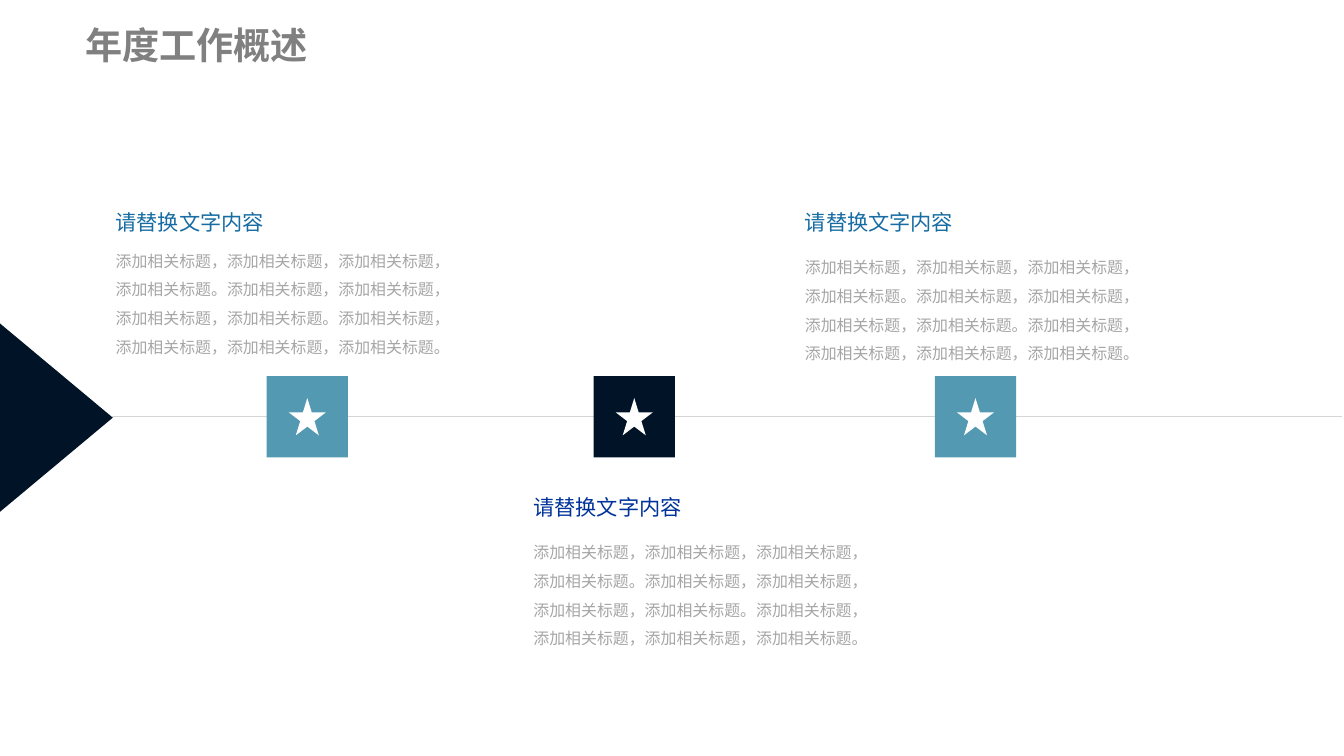
from pptx import Presentation
from pptx.dml.color import RGBColor
from pptx.enum.shapes import MSO_CONNECTOR, MSO_SHAPE
from pptx.enum.text import MSO_ANCHOR
from pptx.oxml.ns import qn
from pptx.util import Inches, Pt
from lxml import etree

TRIANGLE = MSO_SHAPE.ISOSCELES_TRIANGLE
SQUARE = MSO_SHAPE.RECTANGLE
STAR = MSO_SHAPE.STAR_5_POINT
STRAIGHT = MSO_CONNECTOR.STRAIGHT
TOP, MIDDLE = MSO_ANCHOR.TOP, MSO_ANCHOR.MIDDLE

PAGE_WIDTH, PAGE_HEIGHT = 14.06, 7.91
AXIS_Y = 4.36
SQUARE_SIZE, STAR_SIZE = 0.85, 0.39
TEXT_WIDTH, HEADING_WIDTH = 3.57, 1.57
HEADING_HEIGHT, BODY_HEIGHT = 0.27, 1.18
UPPER_Y, LOWER_Y = 2.19, 5.17

NAVY, TEAL, WHITE = "011327", "5399B2", "FFFFFF"
BLUE, ROYAL = "166CA3", "003399"
LINE_GREY, BODY_GREY, TITLE_GREY = "D5D5D5", "A6A6A6", "808080"

HEADING = "请替换文字内容"
BODY = ("添加相关标题，" * 3 + "添加相关标题。") * 3

# square left, square colour, text left, text top, heading colour, body offset
MILESTONES = [
    (2.79, TEAL, 1.21, UPPER_Y, BLUE, 0.34),
    (6.21, NAVY, 5.58, LOWER_Y, ROYAL, 0.41),
    (9.78, TEAL, 8.42, UPPER_Y, BLUE, 0.41),
]


def colour(code):
    return RGBColor.from_string(code)


def add_solid(shapes, kind, left, top, width, height, fill):
    shape = shapes.add_shape(kind, Inches(left), Inches(top),
                             Inches(width), Inches(height))
    shape.shadow.inherit = False
    shape.fill.solid()
    shape.fill.fore_color.rgb = colour(fill)
    shape.line.fill.background()
    return shape


def add_text(page, left, top, width, height, text, size, ink,
             bold=False, wrap=True, spacing=None, anchor=TOP):
    box = page.shapes.add_textbox(Inches(left), Inches(top),
                                  Inches(width), Inches(height))
    frame = box.text_frame
    frame.margin_left = frame.margin_right = 0
    frame.margin_top = frame.margin_bottom = 0
    frame.word_wrap = wrap
    frame.vertical_anchor = anchor
    para = frame.paragraphs[0]
    if spacing:
        para.line_spacing = spacing
    span = para.add_run()
    span.text = text
    span.font.name = "Arial"
    span.font.size = Pt(size)
    span.font.bold = bold
    span.font.color.rgb = colour(ink)


def add_axis(page, left, right, arrow_width, arrow_height):
    """Draw the timeline with a large arrowhead at the page's left edge."""
    # The triangle is turned, so its own width is the height seen on the page.
    arrow = add_solid(page.shapes, TRIANGLE, (arrow_width - arrow_height) / 2,
                      AXIS_Y + 0.01 - arrow_width / 2,
                      arrow_height, arrow_width, NAVY)
    arrow.rotation = 90
    line = page.shapes.add_connector(STRAIGHT, Inches(left), Inches(AXIS_Y),
                                     Inches(right), Inches(AXIS_Y))
    line.line.color.rgb = colour(LINE_GREY)
    line.line.width = Pt(1)
    etree.SubElement(line._element.spPr, qn("a:effectLst"))


def add_marker(page, left, fill):
    """Group a square centred on the timeline with a star in its middle."""
    group = page.shapes.add_group_shape()
    top = AXIS_Y - SQUARE_SIZE / 2
    inset = (SQUARE_SIZE - STAR_SIZE) / 2
    add_solid(group.shapes, SQUARE, left, top, SQUARE_SIZE, SQUARE_SIZE, fill)
    add_solid(group.shapes, STAR, left + inset, top + inset,
              STAR_SIZE, STAR_SIZE, WHITE)


def add_caption(page, left, top, ink, body_offset):
    add_text(page, left, top + body_offset, TEXT_WIDTH, BODY_HEIGHT,
             BODY, 12, BODY_GREY, spacing=1.5)
    add_text(page, left, top, HEADING_WIDTH, HEADING_HEIGHT,
             HEADING, 16, ink, wrap=False)


def main():
    deck = Presentation()
    deck.slide_width, deck.slide_height = Inches(PAGE_WIDTH), Inches(PAGE_HEIGHT)
    page = deck.slides.add_slide(deck.slide_layouts[6])
    add_axis(page, 1.17, 14.04, 1.18, 1.97)
    for square_left, fill, text_left, top, ink, body_offset in MILESTONES:
        add_marker(page, square_left, fill)
        add_caption(page, text_left, top, ink, body_offset)
    add_text(page, 0.89, 0.22, 2.53, 0.49, "年度工作概述", 28, TITLE_GREY,
             bold=True, anchor=MIDDLE)
    deck.save("out.pptx")


if __name__ == "__main__":
    main()
